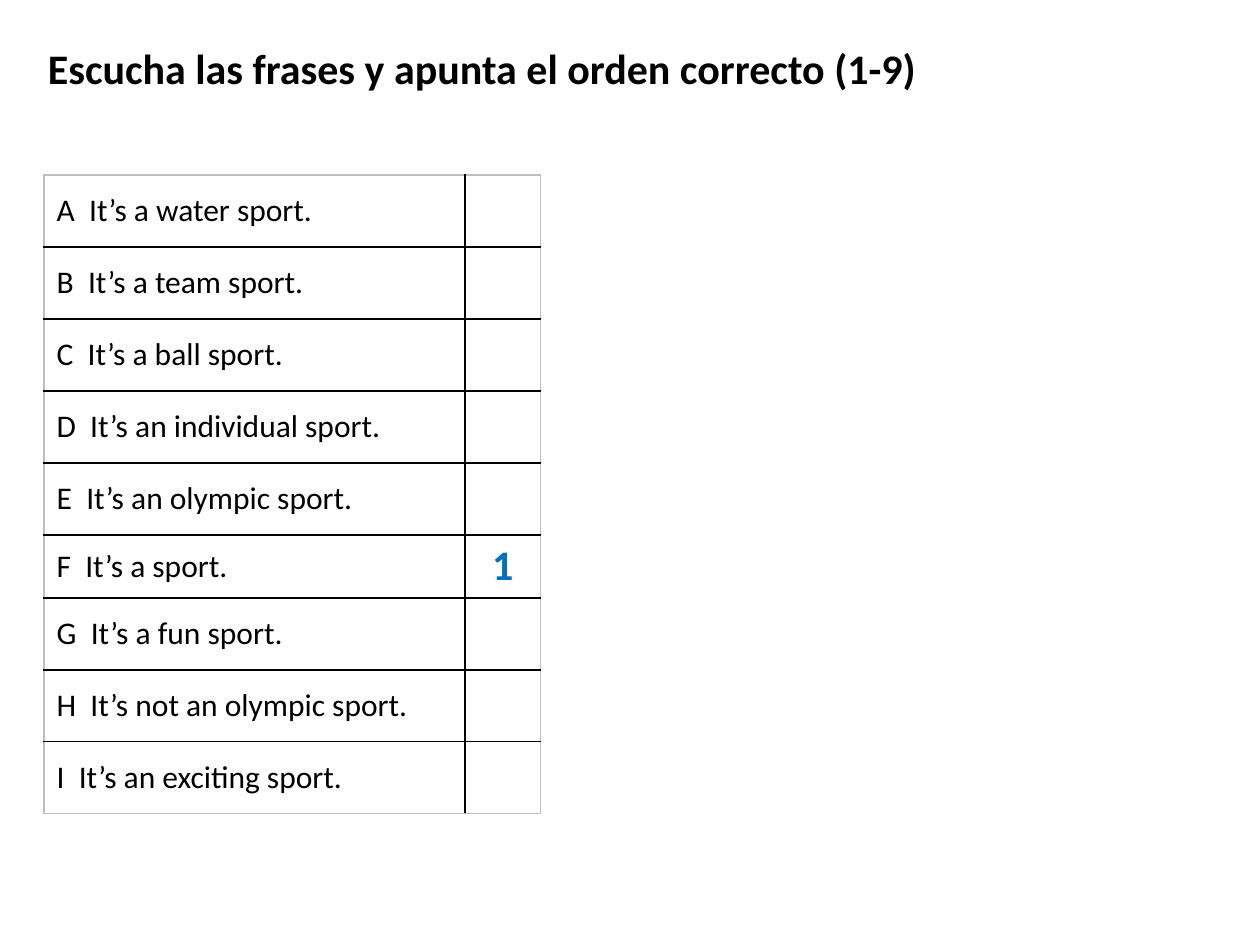
from lxml import etree
from pptx import Presentation
from pptx.dml.color import RGBColor
from pptx.enum.text import MSO_ANCHOR, MSO_AUTO_SIZE, PP_ALIGN
from pptx.oxml.ns import qn
from pptx.util import Inches, Pt

LEFT, CENTER = PP_ALIGN.LEFT, PP_ALIGN.CENTER
MIDDLE, TOP = MSO_ANCHOR.MIDDLE, MSO_ANCHOR.TOP
FIT_SHAPE = MSO_AUTO_SIZE.SHAPE_TO_FIT_TEXT

TITLE_ONLY = 5
FONT = "Calibri"
COLORS = {"text": "000000", "answer": "0070C0", "grid": "000000", "frame": "BFBFBF"}

SENTENCES = [
    "It’s a water sport.",
    "It’s a team sport.",
    "It’s a ball sport.",
    "It’s an individual sport.",
    "It’s an olympic sport.",
    "It’s a sport.",
    "It’s a fun sport.",
    "It’s not an olympic sport.",
    "It’s an exciting sport.",
]
ANSWERS = {"F": "1"}


def write(tf, text, size, color="text", bold=False, align=LEFT):
    p = tf.paragraphs[0]
    p.alignment = align
    r = p.add_run()
    r.text = text
    for name, value in {"name": FONT, "size": Pt(size), "bold": bold}.items():
        setattr(r.font, name, value)
    r.font.color.rgb = RGBColor.from_string(COLORS[color])


def set_borders(cell, sides):
    """Draw 1 pt borders; sides maps L, R, T, B to a colour name."""
    tcPr = cell._tc.get_or_add_tcPr()
    for i, (side, color) in enumerate(sides.items()):
        ln = etree.Element(qn(f"a:ln{side}"), w=str(Pt(1)))
        fill = etree.SubElement(ln, qn("a:solidFill"))
        etree.SubElement(fill, qn("a:srgbClr"), val=COLORS[color])
        tcPr.insert(i, ln)


def add_title(slide, left, top, width, height, text):
    sp = slide.shapes.title
    box = {"left": left, "top": top, "width": width, "height": height}
    for name, value in box.items():
        setattr(sp, name, Inches(value))
    tf = sp.text_frame
    frame = {"word_wrap": True, "auto_size": FIT_SHAPE, "vertical_anchor": TOP}
    for name, value in frame.items():
        setattr(tf, name, value)
    write(tf, text, 24, bold=True)


def add_sentence_table(slide, left, top, width, height):
    answer_width, answer_row_height = 0.6, 0.5
    rows = len(SENTENCES)
    row_height = (height - answer_row_height * len(ANSWERS)) / (rows - len(ANSWERS))
    box = [Inches(v) for v in (left, top, width, height)]
    table = slide.shapes.add_table(rows, 2, *box).table
    table.first_row = table.horz_banding = False
    table.columns[0].width = Inches(width - answer_width)
    table.columns[1].width = Inches(answer_width)

    for i, sentence in enumerate(SENTENCES):
        letter = chr(ord("A") + i)
        answered = letter in ANSWERS
        table.rows[i].height = Inches(answer_row_height if answered else row_height)
        for j in range(2):
            cell = table.cell(i, j)
            cell.vertical_anchor = MIDDLE
            cell.fill.background()
            set_borders(cell, {
                "L": "frame" if j == 0 else "grid",
                "R": "frame" if j == 1 else "grid",
                "T": "frame" if i == 0 else "grid",
                "B": "frame" if i == rows - 1 else "grid",
            })
        write(table.cell(i, 0).text_frame, f"{letter}  {sentence}", 18)
        if answered:
            write(table.cell(i, 1).text_frame, ANSWERS[letter], 24,
                  "answer", True, CENTER)


def main():
    prs = Presentation()
    prs.slide_width, prs.slide_height = Inches(10), Inches(7.5)
    slide = prs.slides.add_slide(prs.slide_layouts[TITLE_ONLY])

    # Instruction
    add_title(slide, 0.28, 0.29, 7.72, 0.5,
              "Escucha las frases y apunta el orden correcto (1-9)")
    # Sentences with a column for the order
    add_sentence_table(slide, 0.35, 1.39, 3.94, 5.07)

    prs.save("out.pptx")


if __name__ == "__main__":
    main()
